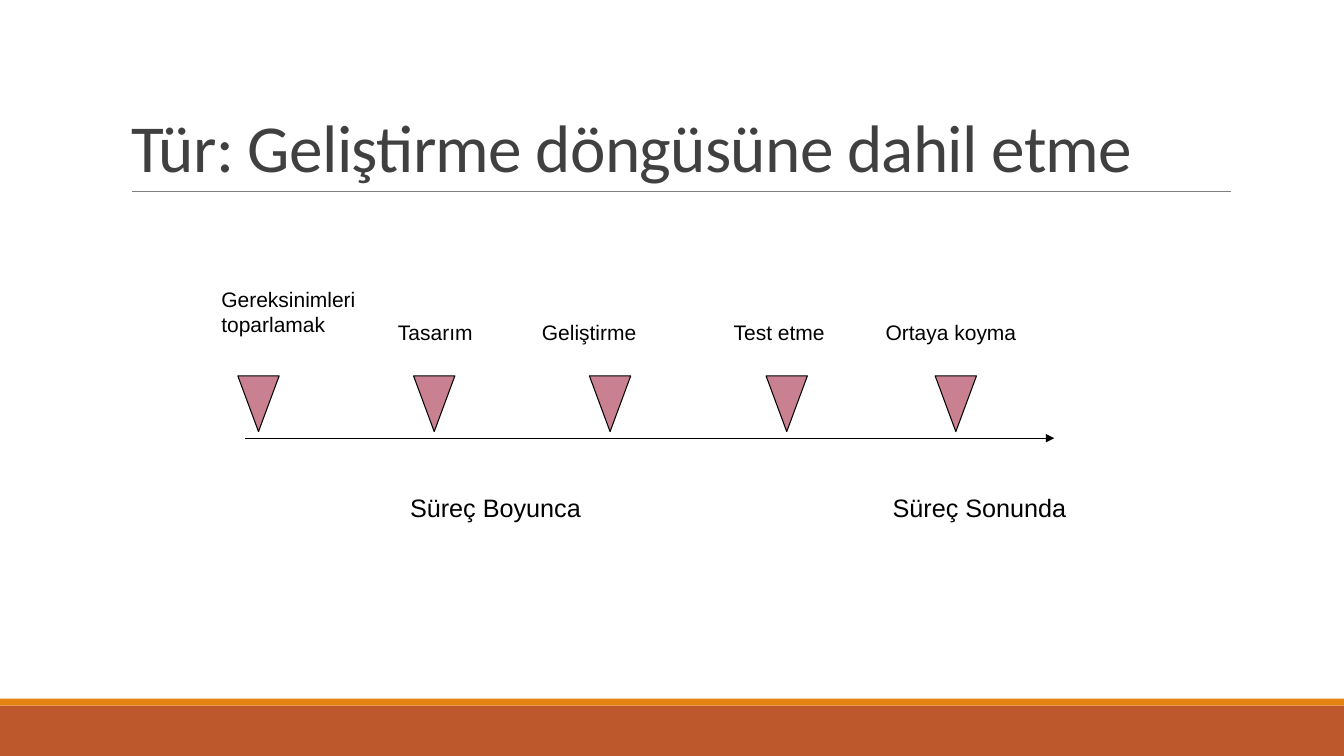
from lxml import etree
from pptx import Presentation
from pptx.dml.color import RGBColor
from pptx.enum.shapes import MSO_CONNECTOR, MSO_SHAPE
from pptx.enum.text import MSO_ANCHOR, MSO_AUTO_SIZE, PP_ALIGN
from pptx.oxml.ns import qn
from pptx.util import Pt

RECTANGLE = MSO_SHAPE.RECTANGLE
TRIANGLE = MSO_SHAPE.ISOSCELES_TRIANGLE
STRAIGHT = MSO_CONNECTOR.STRAIGHT
BOTTOM = MSO_ANCHOR.BOTTOM
LEFT = PP_ALIGN.LEFT
NO_AUTOFIT = MSO_AUTO_SIZE.NONE
FIT_SHAPE = MSO_AUTO_SIZE.SHAPE_TO_FIT_TEXT


def color(hex_value):
    return RGBColor.from_string(hex_value)


def add_line(left, right, y, line_color, width):
    """Add a horizontal line without a shadow."""
    line = slide.shapes.add_connector(STRAIGHT, Pt(left), Pt(y), Pt(right), Pt(y))
    line.line.color.rgb = color(line_color)
    line.line.width = Pt(width)
    etree.SubElement(line._element.spPr, qn("a:effectLst"))
    return line


presentation = Presentation()
presentation.slide_width = Pt(960)
presentation.slide_height = Pt(540)
slide = presentation.slides.add_slide(presentation.slide_layouts[5])

# Footer bands: top, height, fill
for top, height, fill in [(504, 36, "BD582C"), (499, 5, "E48312")]:
    band = slide.shapes.add_shape(RECTANGLE, 0, Pt(top), Pt(960), Pt(height))
    band.shadow.inherit = False
    band.fill.solid()
    band.fill.fore_color.rgb = color(fill)
    band.line.fill.background()

# Title and its rule
title = slide.shapes.title
title.left, title.top, title.width, title.height = Pt(86.4), Pt(22.5), Pt(823), Pt(114.2)
title_frame = title.text_frame
title_frame.text = "Tür: Geliştirme döngüsüne dahil etme"
title_frame.word_wrap = True
title_frame.auto_size = NO_AUTOFIT
title_frame.vertical_anchor = BOTTOM
paragraph = title_frame.paragraphs[0]
paragraph.alignment = LEFT
paragraph.line_spacing = 0.85
run = paragraph.runs[0]
run.font.name = "Calibri"
run.font.size = Pt(48)
run.font.color.rgb = color("404040")
run.font._element.set("spc", "-50")
add_line(94.3, 879, 136.7, "808080", 0.5)

# Timeline arrow
timeline = add_line(175, 753, 313, "000000", 0.75)
etree.SubElement(timeline.line._get_or_add_ln(), qn("a:tailEnd"), type="triangle")

# Stage markers along the timeline
for left in [169.9, 295.4, 421, 547.2, 668]:
    marker = slide.shapes.add_shape(TRIANGLE, Pt(left), Pt(268.5), Pt(29.5), Pt(39.8))
    marker.rotation = 180
    marker.shadow.inherit = False
    marker.fill.solid()
    marker.fill.fore_color.rgb = color("9E1936")
    fill_color = marker._element.spPr.find(qn("a:solidFill"))[0]
    etree.SubElement(fill_color, qn("a:alpha"), val="55000")
    marker.line.color.rgb = color("000000")
    marker.line.width = Pt(0.75)

# Labels: text, left, top, width, height, font size
labels = [
    ("Gereksinimleri\ntoparlamak", 151, 201, 126, 58.3, 15),
    ("Tasarım", 277.2, 224.6, 77.8, 33.8, 15),
    ("Geliştirme", 380, 224.6, 93.6, 33.8, 15),
    ("Test etme", 517, 224.6, 90.7, 33.8, 15),
    ("Ortaya koyma", 625.5, 224.6, 123, 33.8, 15),
    ("Süreç Boyunca", 285.8, 347.8, 137.5, 29, 18),
    ("Süreç Sonunda", 630.5, 347.8, 139.7, 29, 18),
]
for text, left, top, width, height, size in labels:
    label = slide.shapes.add_textbox(Pt(left), Pt(top), Pt(width), Pt(height))
    label.text_frame.text = text
    label.text_frame.word_wrap = False
    label.text_frame.auto_size = FIT_SHAPE
    for paragraph in label.text_frame.paragraphs:
        font = paragraph.runs[0].font
        font.name = "Arial"
        font.size = Pt(size)
        font.color.rgb = color("000000")

presentation.save("out.pptx")
